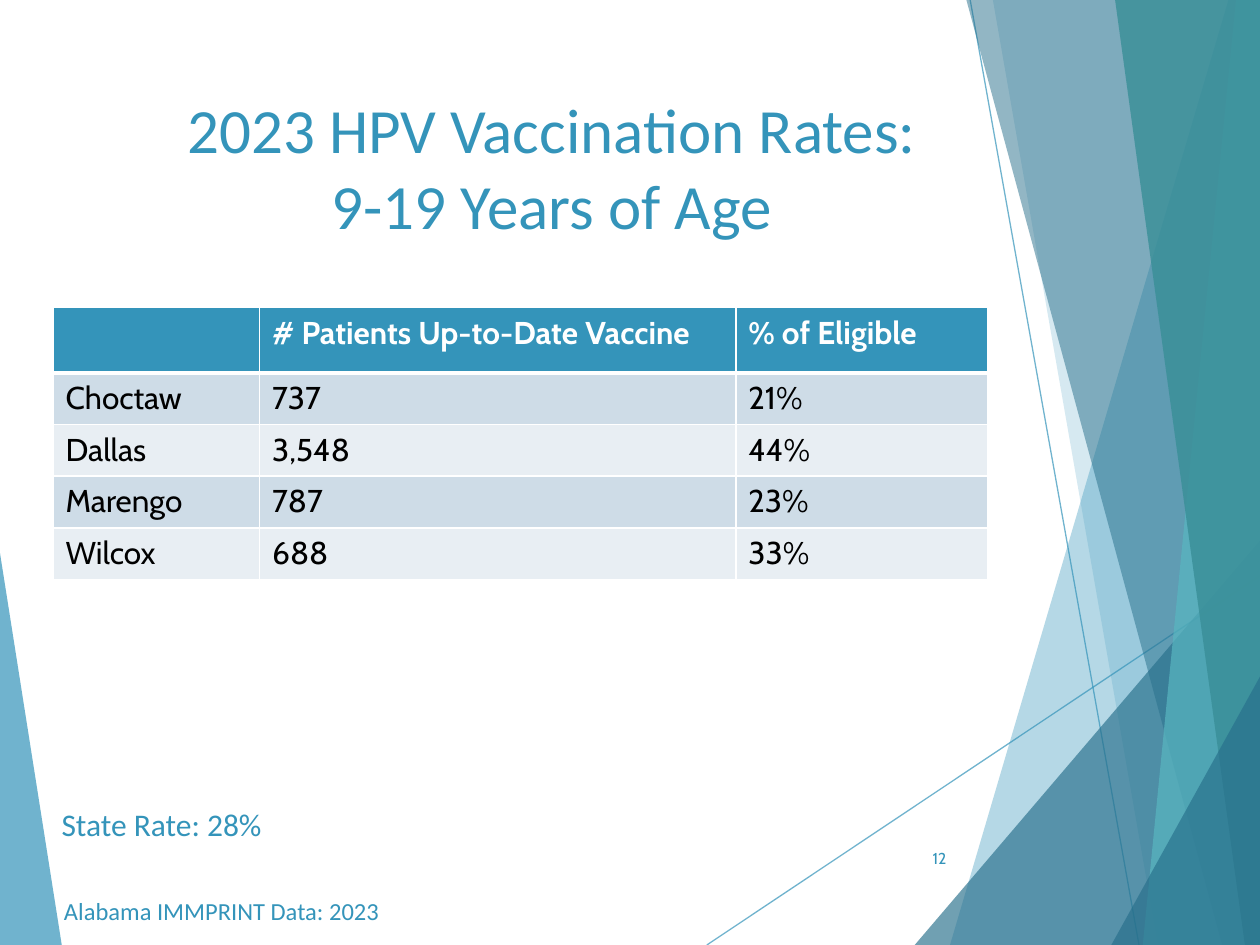
from lxml import etree
from pptx import Presentation
from pptx.dml.color import RGBColor
from pptx.enum.shapes import MSO_CONNECTOR
from pptx.enum.text import MSO_ANCHOR, PP_ALIGN
from pptx.oxml.ns import qn
from pptx.util import Inches, Pt

STRAIGHT = MSO_CONNECTOR.STRAIGHT
TOP, MIDDLE = MSO_ANCHOR.TOP, MSO_ANCHOR.MIDDLE
LEFT, CENTER, RIGHT = PP_ALIGN.LEFT, PP_ALIGN.CENTER, PP_ALIGN.RIGHT

BLUE = RGBColor(0x34, 0x94, 0xBA)
DARK_BLUE = RGBColor(0x27, 0x6F, 0x8B)
TURQUOISE = RGBColor(0x58, 0xB6, 0xC0)
TEAL = RGBColor(0x3A, 0x8F, 0x98)
BAND_DARK = RGBColor(0xCE, 0xDC, 0xE7)
BAND_LIGHT = RGBColor(0xE8, 0xEE, 0xF3)
WHITE = RGBColor(0xFF, 0xFF, 0xFF)
BLACK = RGBColor(0, 0, 0)

# The slide is a grid of 100 columns by 75 rows
COLUMNS, ROWS = 100, 75
SLIDE_WIDTH, SLIDE_HEIGHT = Inches(10), Inches(7.5)


def write(frame, text, font="Calibri", size=18, color=BLUE, bold=False,
          align=LEFT, anchor=TOP):
    """Fill a text frame, one paragraph with line breaks where text has them."""
    frame.word_wrap = True
    frame.vertical_anchor = anchor
    paragraph = frame.paragraphs[0]
    paragraph.alignment = align
    for number, line in enumerate(text.split("\n")):
        if number:
            paragraph.add_line_break()
        run = paragraph.add_run()
        run.text = line
        run.font.name, run.font.size = font, Pt(size)
        run.font.bold, run.font.color.rgb = bold, color


def set_opacity(parent, percent):
    """Make the solid colour under an XML element partly transparent."""
    color = parent.find(".//" + qn("a:srgbClr"))
    etree.SubElement(color, qn("a:alpha"), val=str(percent * 1000))


class SlideBuilder:
    def __init__(self, presentation):
        self.slide = presentation.slides.add_slide(presentation.slide_layouts[6])
        self.shapes = self.slide.shapes
        self.table_font = "Cabin"

    def x(self, column):
        return round(SLIDE_WIDTH * column / COLUMNS)

    def y(self, row):
        return round(SLIDE_HEIGHT * row / ROWS)

    def box(self, left, top, width, height):
        return self.x(left), self.y(top), self.x(width), self.y(height)

    def facet(self, points, color, opacity):
        corners = [(self.x(column), self.y(row)) for column, row in points]
        builder = self.shapes.build_freeform(*corners[0])
        builder.add_line_segments(corners[1:], close=True)
        shape = builder.convert_to_shape()
        shape.shadow.inherit = False
        shape.fill.solid()
        shape.fill.fore_color.rgb = color
        shape.line.fill.background()
        set_opacity(shape.fill._xPr, opacity)

    def line(self, start, end, color=BLUE, width=0.75, opacity=70):
        connector = self.shapes.add_connector(
            STRAIGHT, self.x(start[0]), self.y(start[1]), self.x(end[0]), self.y(end[1]))
        connector.line.color.rgb = color
        connector.line.width = Pt(width)
        properties = connector._element.spPr
        set_opacity(properties, opacity)
        etree.SubElement(properties, qn("a:effectLst"))

    def text(self, place, text, **style):
        write(self.shapes.add_textbox(*self.box(*place)).text_frame, text, **style)

    def border(self, cell, bottom_width):
        properties = cell._tc.get_or_add_tcPr()
        widths = {"a:lnL": 1, "a:lnR": 1, "a:lnT": 1, "a:lnB": bottom_width}
        for position, (tag, width) in enumerate(widths.items()):
            edge = etree.Element(qn(tag), w=str(Pt(width)))
            fill = etree.SubElement(edge, qn("a:solidFill"))
            etree.SubElement(fill, qn("a:srgbClr"), val=str(WHITE))
            properties.insert(position, edge)

    def table(self, left, top, widths, heights, rows):
        place = self.box(left, top, sum(widths), sum(heights))
        table = self.shapes.add_table(len(rows), len(widths), *place).table
        for column, width in zip(table.columns, widths):
            column.width = self.x(width)
        for index, (height, values) in enumerate(zip(heights, rows)):
            table.rows[index].height = self.y(height)
            header = index == 0
            band = BLUE if header else (BAND_LIGHT, BAND_DARK)[index % 2]
            for cell, value in zip(table.rows[index].cells, values):
                cell.fill.solid()
                cell.fill.fore_color.rgb = band
                self.border(cell, 3 if header else 1)
                write(cell.text_frame, value, font=self.table_font,
                      color=WHITE if header else BLACK, bold=header)


def main():
    presentation = Presentation()
    presentation.slide_width, presentation.slide_height = SLIDE_WIDTH, SLIDE_HEIGHT
    builder = SlideBuilder(presentation)

    # Faceted background: left wedge, two thin lines, right-hand facets
    builder.facet([(0, 43.9), (4.9, 75), (0, 75)], BLUE, 70)
    builder.line((56.1, 75), (100, 45.7))
    builder.line((77, 0), (90.4, 75))
    facets = [
        ([(97.5, 0), (75.4, 75), (100, 75), (100, 0)], BLUE, 36),
        ([(78.8, 0), (91.9, 75), (100, 75), (100, 0)], BLUE, 20),
        ([(72.6, 75), (100, 42.9), (100, 75)], DARK_BLUE, 66),
        ([(76.7, 0), (97, 75), (100, 75), (100, 0)], DARK_BLUE, 50),
        ([(98.1, 0), (90.7, 75), (100, 75), (100, 0)], TURQUOISE, 70),
        ([(88.5, 0), (98.8, 75), (100, 75), (100, 0)], TEAL, 82),
        ([(88.2, 75), (100, 53.7), (100, 75)], DARK_BLUE, 66),
    ]
    for points, color, opacity in facets:
        builder.facet(points, color, opacity)

    # Title
    builder.text((6.7, 6.7, 74.2, 14.4), "2023 HPV Vaccination Rates:\n9-19 Years of Age",
                 size=36, align=CENTER)

    # Vaccination rates by county
    builder.table(4.2, 24.4, [16.4, 37.8, 20], [5.2] + [4.1] * 4, [
        ("", "# Patients Up-to-Date Vaccine", "% of Eligible"),
        ("Choctaw", "737", "21%"),
        ("Dallas", "3,548", "44%"),
        ("Marengo", "787", "23%"),
        ("Wilcox", "688", "33%"),
    ])

    # Slide number, state rate and data source
    builder.text((70.5, 66.1, 5.6, 4), "12", font="Cabin", size=9, align=RIGHT, anchor=MIDDLE)
    builder.text((3.9, 63.4, 22, 7.1), "State Rate: 28%")
    builder.text((4.1, 70.6, 66.3, 3.4), "Alabama IMMPRINT Data: 2023", size=14)

    presentation.save("out.pptx")


if __name__ == "__main__":
    main()
